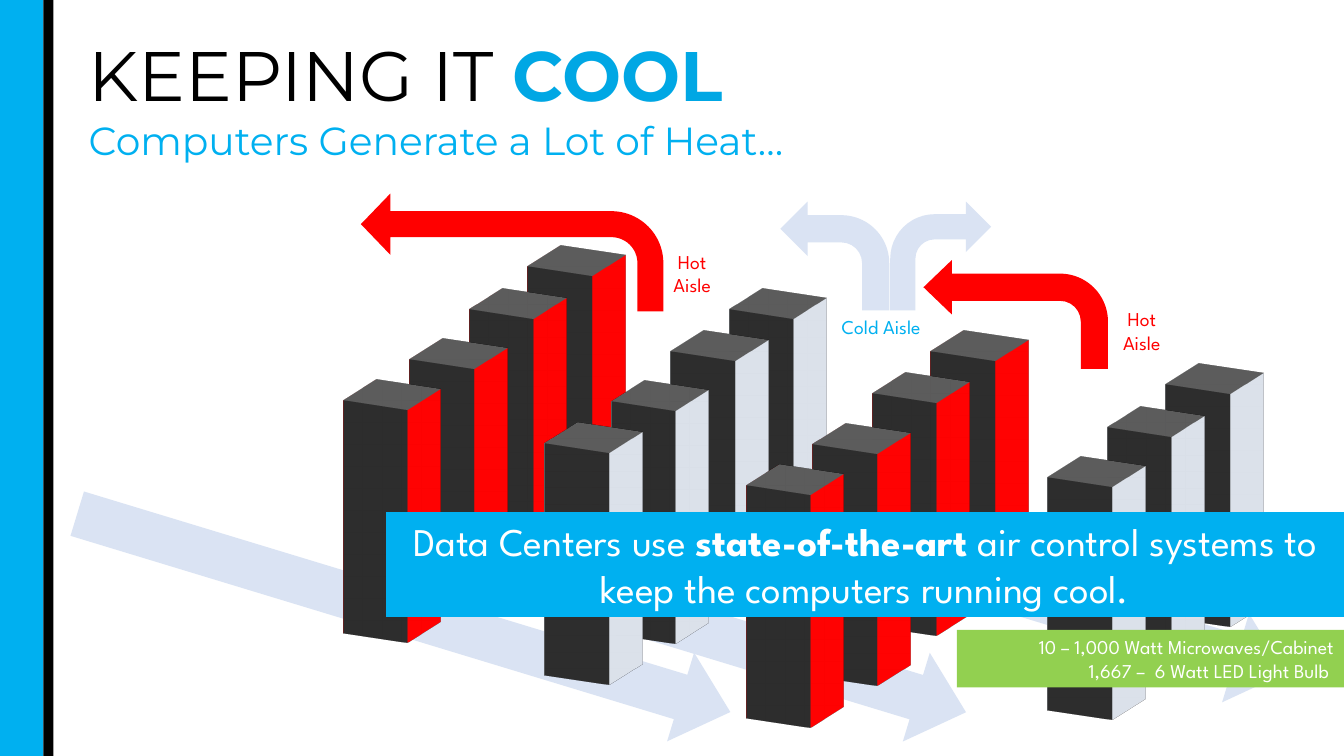
from dataclasses import dataclass

from lxml.etree import SubElement
from pptx import Presentation
from pptx.dml.color import RGBColor
from pptx.enum.shapes import MSO_SHAPE as Shape
from pptx.enum.text import MSO_ANCHOR as Anchor, MSO_AUTO_SIZE as Fit, PP_ALIGN as Align
from pptx.oxml.ns import qn
from pptx.util import Inches, Pt


@dataclass(frozen=True)
class Theme:
    """Colours, fonts and type sizes of the slide."""
    blue: str = "00B0F0"
    cool: str = "00A7E4"
    black: str = "000000"
    white: str = "FFFFFF"
    red: str = "FF0000"
    green: str = "92D050"
    air: str = "DAE3F3"
    cold: str = "D6DCE5"
    steel: str = "7F7F7F"
    head: str = "Montserrat"
    body: str = "League Spartan"
    title: int = 50
    large: int = 28
    small: int = 14


THEME = Theme()


def block(slide, kind, box, color):
    """Add a plain filled preset shape in a box given in inches."""
    shape = slide.shapes.add_shape(kind, *map(Inches, box))
    shape.shadow.inherit = False
    shape.fill.solid()
    shape.fill.fore_color.rgb = RGBColor.from_string(color)
    shape.line.fill.background()
    return shape


def write(shape, lines, size, font, align, anchor=Anchor.TOP):
    """Set lines of (text, colour, bold) parts in a shape."""
    frame = shape.text_frame
    frame.word_wrap = True
    frame.auto_size = Fit.NONE
    frame.vertical_anchor = anchor
    for i, parts in enumerate(lines):
        para = frame.add_paragraph() if i else frame.paragraphs[0]
        para.alignment = align
        for text, color, bold in parts:
            run = para.add_run()
            run.text = text
            run.font.name = font
            run.font.size = Pt(size)
            run.font.bold = bold
            run.font.color.rgb = RGBColor.from_string(color)


def label(slide, box, text, color, size=THEME.small, font=THEME.body, align=Align.CENTER):
    """Add one plain line of text in a box."""
    area = slide.shapes.add_textbox(*map(Inches, box))
    write(area, [[(text, color, False)]], size, font, align)


def heading(slide, left, top):
    """Place the title and the line under it."""
    title = slide.shapes.title
    title.left, title.top = Inches(left), Inches(top)
    title.width, title.height = Inches(10.41), Inches(0.94)
    parts = [("KEEPING IT ", THEME.black, False), ("COOL", THEME.cool, True)]
    write(title, [parts], THEME.title, THEME.head, Align.LEFT)
    label(slide, (left, top + 0.84, 9.35, 0.57), "Computers Generate a Lot of Heat…",
          THEME.blue, THEME.large, THEME.head, Align.LEFT)


def edge(slide, height):
    """Draw the two bars down the left side."""
    block(slide, Shape.RECTANGLE, (0, 0, 0.43, height), THEME.blue)
    block(slide, Shape.RECTANGLE, (0.43, 0, 0.1, height), THEME.black)


def rack(slide, left, top, color):
    """Draw a cabinet as a rectangle extruded in depth."""
    door = block(slide, Shape.RECTANGLE, (left, top, 0.75, 2.42), color)
    props = door.element.spPr
    scene = SubElement(props, qn("a:scene3d"))
    SubElement(scene, qn("a:camera"), prst="isometricOffAxis2Right")
    SubElement(scene, qn("a:lightRig"), rig="threePt", dir="t")
    solid = SubElement(props, qn("a:sp3d"), extrusionH=str(Inches(0.71)))
    tint = SubElement(solid, qn("a:extrusionClr"))
    SubElement(tint, qn("a:srgbClr"), val=THEME.steel)


def row(slide, left, top, color, count=4):
    """Draw a row of cabinets from the back to the front."""
    steps = [(0, 0), (0.58, 0.42), (1.17, 0.92), (1.83, 1.33)]
    for dx, dy in steps[:count]:
        rack(slide, left - dx, top + dy, color)


def floor(slide):
    """Draw the streams of cold air under the cabinets."""
    for left, top, width in [(4.96, 5.06, 7.96), (3.75, 5.74, 5.96), (0.62, 5.62, 6.77)]:
        arrow = block(slide, Shape.RIGHT_ARROW, (left, top, width, 0.92), THEME.air)
        arrow.adjustments[1] = 0.56
        arrow.rotation = 16.9


def bend(slide, box, color, flip=True, shaft=0.25, head=0.25, tip=0.25):
    """Draw an arrow that rises and turns, to the left when flipped."""
    arrow = block(slide, Shape.BENT_ARROW, box, color)
    for i, value in enumerate((shaft, head, tip, 0.44)):
        arrow.adjustments[i] = value
    if flip:
        arrow.element.spPr.xfrm.set("flipH", "1")


def aisles(slide):
    """Draw the air above the aisles and name each one."""
    bend(slide, (3.58, 1.92, 3, 1.17), THEME.red, shaft=0.22, head=0.26)
    bend(slide, (7.74, 2, 1.08, 1.08), THEME.air)
    bend(slide, (8.83, 2, 1, 1.08), THEME.air, flip=False)
    bend(slide, (9.16, 2.58, 1.83, 1.08), THEME.red, tip=0.26)
    label(slide, (6.49, 2.43, 0.75, 0.57), "Hot Aisle", THEME.red)
    label(slide, (7.99, 3.08, 1.5, 0.34), "Cold Aisle", THEME.blue)
    label(slide, (10.91, 3, 0.83, 0.57), "Hot Aisle", THEME.red)


def banner(slide, box, color, lines, size, align):
    """Add a filled strip with white text."""
    strip = block(slide, Shape.RECTANGLE, box, color)
    lines = [[(text, THEME.white, bold) for text, bold in parts] for parts in lines]
    write(strip, lines, size, THEME.body, align, Anchor.MIDDLE)


def main():
    """Build and save the slide."""
    deck = Presentation()
    deck.slide_width, deck.slide_height = Inches(13.33), Inches(7.5)
    slide = deck.slides.add_slide(deck.slide_layouts[5])
    edge(slide, 7.5)
    heading(slide, 0.78, 0.26)
    floor(slide)
    row(slide, 5.66, 2.58, THEME.red)
    row(slide, 7.66, 3, THEME.cold)
    row(slide, 9.66, 3.42, THEME.red)
    row(slide, 11.99, 3.75, THEME.cold, 3)
    aisles(slide)
    claim = [("Data Centers use ", False), ("state-of-the-art", True),
             (" air control systems to keep the computers running cool.", False)]
    banner(slide, (3.83, 5.08, 9.5, 1.04), THEME.blue, [claim], THEME.large, Align.CENTER)
    facts = [[("10 – 1,000 Watt Microwaves/Cabinet", False)],
             [("1,667 –  6 Watt LED Light Bulb ", False)]]
    banner(slide, (9.49, 6.25, 3.84, 0.57), THEME.green, facts, THEME.small, Align.RIGHT)
    deck.save("out.pptx")


if __name__ == "__main__":
    main()
